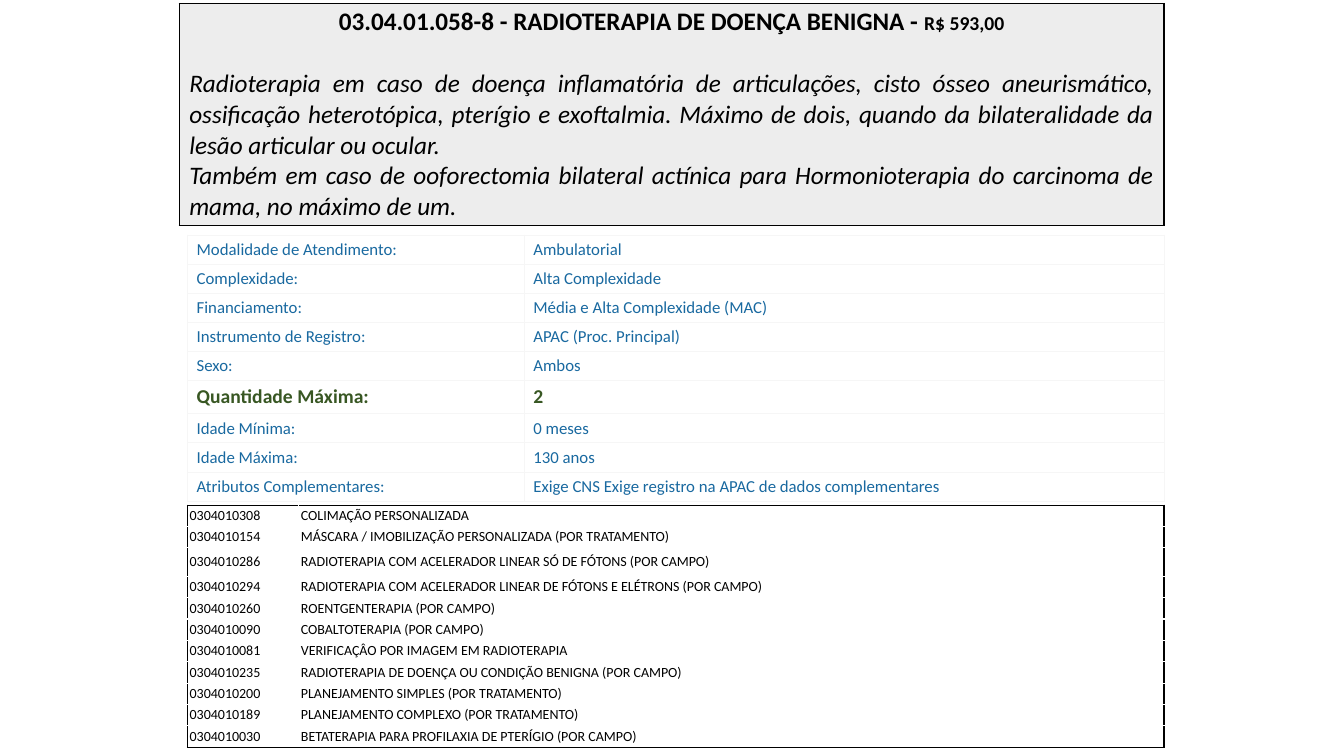
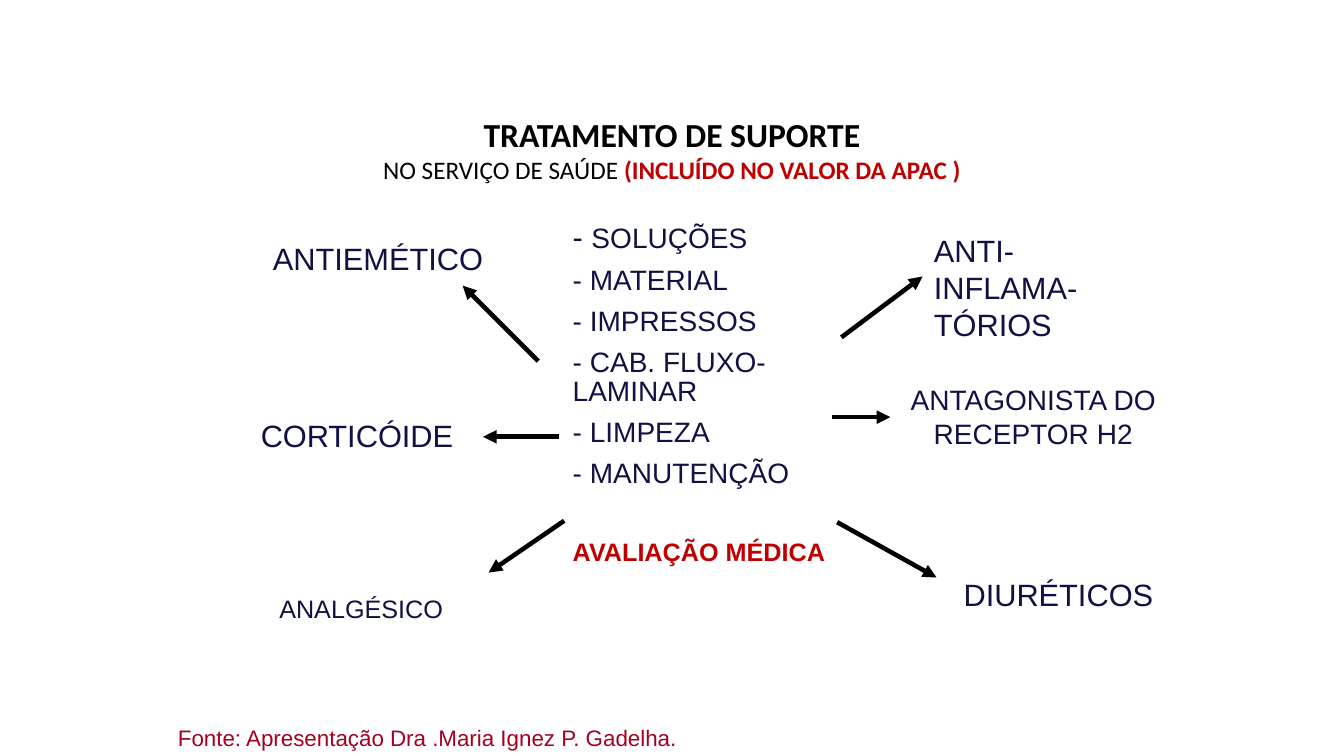
import pptx
import pptx.dml.color
import pptx.enum.shapes
import pptx.enum.text
import pptx.oxml
import pptx.oxml.ns
import pptx.util
from lxml import etree

Pt = pptx.util.Pt
RGBColor = pptx.dml.color.RGBColor
PP_ALIGN = pptx.enum.text.PP_ALIGN
MSO_ANCHOR = pptx.enum.text.MSO_ANCHOR
qn = pptx.oxml.ns.qn

BLACK = RGBColor(0x00, 0x00, 0x00)
WHITE = RGBColor(0xFF, 0xFF, 0xFF)
PANEL_GRAY = RGBColor(0xED, 0xED, 0xED)
GRID_GRAY = RGBColor(0xF6, 0xF6, 0xF6)
LINK_BLUE = RGBColor(0x19, 0x69, 0xA0)
GREEN = RGBColor(0x38, 0x57, 0x23)
NAVY = RGBColor(0x11, 0x11, 0x43)
RED = RGBColor(0xC0, 0x00, 0x00)
CRIMSON = RGBColor(0xA5, 0x00, 0x21)

CENTER = {"alignment": PP_ALIGN.CENTER}
LEFT = {"alignment": PP_ALIGN.LEFT}
JUSTIFY = {"alignment": PP_ALIGN.JUSTIFY}

HIGHLIGHTED = "Quantidade Máxima:"
ATTRIBUTES = [
    ("Modalidade de Atendimento:", "Ambulatorial"),
    ("Complexidade:", "Alta Complexidade"),
    ("Financiamento:", "Média e Alta Complexidade (MAC)"),
    ("Instrumento de Registro:", "APAC (Proc. Principal)"),
    ("Sexo:", "Ambos"),
    (HIGHLIGHTED, "2"),
    ("Idade Mínima:", "0 meses"),
    ("Idade Máxima:", "130 anos"),
    ("Atributos Complementares:", "Exige CNS Exige registro na APAC de dados complementares"),
]
PROCEDURES = [
    ("0304010308", "COLIMAÇÃO PERSONALIZADA"),
    ("0304010154", "MÁSCARA / IMOBILIZAÇÃO PERSONALIZADA (POR TRATAMENTO)"),
    ("0304010286", "RADIOTERAPIA COM ACELERADOR LINEAR SÓ DE FÓTONS (POR CAMPO)"),
    ("0304010294", "RADIOTERAPIA COM ACELERADOR LINEAR DE FÓTONS E ELÉTRONS (POR CAMPO)"),
    ("0304010260", "ROENTGENTERAPIA (POR CAMPO)"),
    ("0304010090", "COBALTOTERAPIA (POR CAMPO)"),
    ("0304010081", "VERIFICAÇÂO POR IMAGEM EM RADIOTERAPIA"),
    ("0304010235", "RADIOTERAPIA DE DOENÇA OU CONDIÇÃO BENIGNA (POR CAMPO)"),
    ("0304010200", "PLANEJAMENTO SIMPLES (POR TRATAMENTO)"),
    ("0304010189", "PLANEJAMENTO COMPLEXO (POR TRATAMENTO)"),
    ("0304010030", "BETATERAPIA PARA PROFILAXIA DE PTERÍGIO (POR CAMPO)"),
]
SUPPLIES = ["MATERIAL", "IMPRESSOS", "CAB. FLUXO-LAMINAR", "LIMPEZA", "MANUTENÇÃO"]


def set_attributes(target, values):
    for name, value in values.items():
        setattr(target, name, value)


def font_format(size, color, name="Calibri", **extra):
    return {"size": Pt(size), "color": color, "name": name, **extra}


def arial(size, color=NAVY, **extra):
    return font_format(size, color, "Arial", **extra)


def write_text(text_frame, paragraphs):
    for index, (layout, runs) in enumerate(paragraphs):
        paragraph = text_frame.paragraphs[0] if index == 0 else text_frame.add_paragraph()
        set_attributes(paragraph, layout)
        for text, font in runs:
            run = paragraph.add_run()
            run.text = text
            set_attributes(run.font, {key: font[key] for key in font if key != "color"})
            run.font.color.rgb = font["color"]


def set_borders(cell, sides, color, width):
    properties = cell._tc.get_or_add_tcPr()
    for side in "LRTB":
        if side in sides:
            line = etree.SubElement(properties, qn(f"a:ln{side}"), w=str(Pt(width)))
            fill = etree.SubElement(line, qn("a:solidFill"))
            etree.SubElement(fill, qn("a:srgbClr"), val=str(color))


def outline_sides(row, column, row_count, column_count):
    edges = {"L": column == 0, "R": column == column_count - 1,
             "T": row == 0, "B": row == row_count - 1}
    return [side for side, is_edge in edges.items() if is_edge]


def add_table(slide, left, top, widths, heights, rows, fill, border, margins, grid=True):
    frame = slide.shapes.add_table(len(heights), len(widths), Pt(left), Pt(top),
                                   Pt(sum(widths)), Pt(sum(heights)))
    table = frame.table
    set_attributes(table, {"first_row": False, "horz_banding": False})
    for column, width in zip(table.columns, widths):
        column.width = Pt(width)
    for row, height in zip(table.rows, heights):
        row.height = Pt(height)
    side_margin, end_margin = map(Pt, margins)
    cell_format = {
        "margin_left": side_margin, "margin_right": side_margin,
        "margin_top": end_margin, "margin_bottom": end_margin,
        "vertical_anchor": MSO_ANCHOR.MIDDLE,
    }
    for row_index, row in enumerate(rows):
        for column_index, paragraphs in enumerate(row):
            cell = table.cell(row_index, column_index)
            write_text(cell.text_frame, paragraphs)
            set_attributes(cell, cell_format)
            sides = "LRTB" if grid else outline_sides(
                row_index, column_index, len(heights), len(widths))
            set_borders(cell, sides, *border)
            cell.fill.solid()
            cell.fill.fore_color.rgb = fill


def add_text_panel(slide, left, top, width, height, paragraphs):
    shape = slide.shapes.add_shape(pptx.enum.shapes.MSO_SHAPE.RECTANGLE,
                                   Pt(left), Pt(top), Pt(width), Pt(height))
    shape.shadow.inherit = False
    shape.fill.solid()
    shape.fill.fore_color.rgb = WHITE
    shape.line.fill.background()
    set_attributes(shape.text_frame, {"word_wrap": True, "vertical_anchor": MSO_ANCHOR.TOP})
    write_text(shape.text_frame, paragraphs)
    return shape


def add_arrow(slide, start, end):
    connector = slide.shapes.add_connector(pptx.enum.shapes.MSO_CONNECTOR.STRAIGHT,
                                           *map(Pt, start + end))
    connector.line.color.rgb = BLACK
    connector.line.width = Pt(3.25)
    etree.SubElement(connector.line._get_or_add_ln(), qn("a:tailEnd"), type="triangle")
    etree.SubElement(connector._element.spPr, qn("a:effectLst"))
    return connector


def simple_cell(text, font):
    return [(LEFT, [(text, font)])]


def build_procedure_slide(slide):
    title = font_format(18, BLACK, bold=True)
    price = font_format(14, BLACK, bold=True)
    description = font_format(18, BLACK, italic=True)
    heading = [
        (CENTER, [("03.04.01.058-8 - RADIOTERAPIA DE DOENÇA BENIGNA - ", title),
                  ("R$ 593,00", price)]),
        ({**JUSTIFY, "space_before": Pt(22)}, [(
            "Radioterapia em caso de doença inflamatória de articulações, cisto ósseo "
            "aneurismático, ossificação heterotópica, pterígio e exoftalmia. Máximo de dois, "
            "quando da bilateralidade da lesão articular ou ocular. ", description)]),
        (JUSTIFY, [(
            "Também em caso de ooforectomia bilateral actínica para Hormonioterapia do "
            "carcinoma de mama, no máximo de um.", description)]),
    ]
    add_table(slide, 128, 2.5, [703.5], [158.8], [[heading]],
              PANEL_GRAY, (BLACK, 1), (7.2, 2.4))

    regular = font_format(12, LINK_BLUE)
    highlight = font_format(14, GREEN, bold=True)
    attribute_rows = [
        [simple_cell(text, highlight if row[0] == HIGHLIGHTED else regular) for text in row]
        for row in ATTRIBUTES
    ]
    attribute_heights = [23.7 if row[0] == HIGHLIGHTED else 20.8 for row in ATTRIBUTES]
    add_table(slide, 134, 168, [240.5, 457], attribute_heights, attribute_rows,
              WHITE, (GRID_GRAY, 0.75), (6.5, 3))

    code_font = font_format(10, BLACK)
    procedure_rows = [[simple_cell(text, code_font) for text in row] for row in PROCEDURES]
    procedure_heights = [20.2 if index == 2 else 15.3 for index in range(len(PROCEDURES))]
    add_table(slide, 134, 360.8, [79.5, 618], procedure_heights, procedure_rows,
              WHITE, (BLACK, 1), (1.5, 1.5), grid=False)


def build_support_slide(slide):
    labels = [
        (168, 168, 204, 34, "ANTIEMÉTICO", 22),
        (162, 294, 186, 34, "CORTICÓIDE", 22),
        (162, 420, 192, 29, "ANALGÉSICO", 18),
        (672, 408, 168, 34, "DIURÉTICOS", 22),
    ]
    for left, top, width, height, text, size in labels:
        add_text_panel(slide, left, top, width, height, [(CENTER, [(text, arial(size))])])
    antagonist = add_text_panel(slide, 636, 270, 204, 56, [
        (CENTER, [("ANTAGONISTA DO RECEPTOR H2", arial(20))])])

    spacing = {**LEFT, "line_spacing": 0.85}
    supplies = [(spacing, [("- ", arial(22)), ("SOLUÇÕES", arial(20))])]
    supplies += [({**spacing, "space_before": Pt(9)}, [(f"- {name}", arial(20))])
                 for name in SUPPLIES]
    add_text_panel(slide, 402, 156, 192, 202, supplies)

    arrows = [
        ((384.5, 258), (330.5, 204)),
        ((399, 312), (345, 312)),
        ((403, 372), (349, 409)),
        ((598, 373), (669, 412.5)),
        ((601, 241), (659, 197.5)),
    ]
    for start, end in arrows:
        add_arrow(slide, start, end)
    add_arrow(slide, (594, 298), (636, 298)).end_connect(antagonist, 1)

    add_text_panel(slide, 660, 162, 176.5, 87, [
        (LEFT, [(text, arial(22))]) for text in ("ANTI-", "INFLAMA-", "TÓRIOS")])
    source = slide.shapes.add_textbox(Pt(120), Pt(513.5), Pt(425.5), Pt(26.5))
    source.text_frame.word_wrap = True
    write_text(source.text_frame, [
        (LEFT, [("Fonte: Apresentação Dra .Maria Ignez P. Gadelha.", arial(16, CRIMSON))])])
    add_text_panel(slide, 120, 78, 720, 58, [
        (CENTER, [("TRATAMENTO DE SUPORTE", font_format(24, BLACK, bold=True))]),
        (CENTER, [("NO SERVIÇO DE SAÚDE ", font_format(18, BLACK)),
                  ("(INCLUÍDO NO VALOR DA APAC )", font_format(18, RED, bold=True))]),
    ])
    add_text_panel(slide, 402, 379.5, 198, 29, [
        (LEFT, [("AVALIAÇÃO MÉDICA", arial(18, RED, bold=True))])])


def main():
    presentation = pptx.Presentation()
    set_attributes(presentation, {"slide_width": Pt(960), "slide_height": Pt(540)})
    for build in (build_procedure_slide, build_support_slide):
        build(presentation.slides.add_slide(presentation.slide_layouts[6]))
    presentation.save("out.pptx")


if __name__ == "__main__":
    main()
